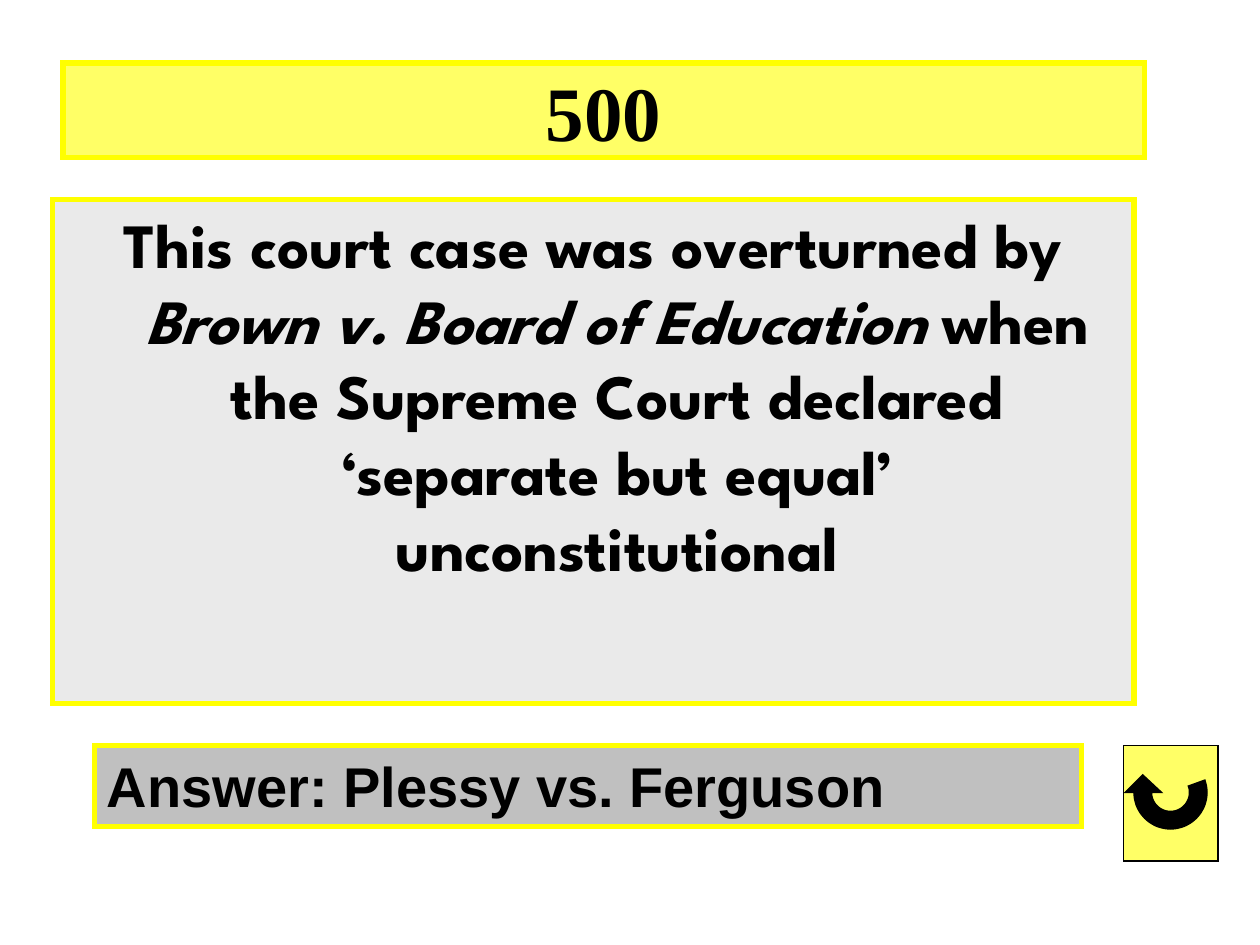
from math import cos, sin, radians
from lxml.etree import SubElement
from pptx import Presentation
from pptx.dml.color import RGBColor
from pptx.enum.shapes import MSO_SHAPE as Shape
from pptx.enum.text import PP_ALIGN as Align, MSO_ANCHOR as Anchor
from pptx.oxml.ns import qn
from pptx.util import Inches, Pt

WIDE, HIGH = 10, 7.5
COLS, ROWS = 120, 90  # grid cells of 1/12 inch


def tint(code):
    return RGBColor.from_string(code)


def write(shape, runs, font, size, align=Align.LEFT, anchor=Anchor.TOP,
          hang=0, before=None):
    """Fill one paragraph; runs are (text, italic) pairs."""
    frame = shape.text_frame
    frame.word_wrap = True
    frame.vertical_anchor = anchor
    para = frame.paragraphs[0]
    para.alignment = align
    if before is not None:
        para.space_before = Pt(before)
    if hang:
        props = para._p.get_or_add_pPr()
        props.set("marL", str(Inches(hang)))
        props.set("indent", str(-Inches(hang)))
    for text, slant in runs:
        run = para.add_run()
        run.text = text
        face = run.font
        face.name, face.size = font, Pt(size)
        face.bold, face.italic = True, slant
        face.color.rgb = tint("000000")


class Board:
    edge, glow, ink = "FFFF00", "FFFF66", "000000"

    def __init__(self, deck):
        self.slide = deck.slides.add_slide(deck.slide_layouts[5])

    def place(self, col, row, cols, rows):
        x, y = Inches(WIDE / COLS), Inches(HIGH / ROWS)
        return [round(n) for n in (col * x, row * y, cols * x, rows * y)]

    def paint(self, shape, fill, line, width):
        shape.fill.solid()
        shape.fill.fore_color.rgb = tint(fill)
        shape.line.color.rgb = tint(line)
        shape.line.width = Pt(width)
        # Square corners
        stroke = shape._element.spPr.find(qn("a:ln"))
        SubElement(stroke, qn("a:miter")).set("lim", "800000")

    def title(self, text, *cells):
        head = self.slide.shapes.title
        head.left, head.top, head.width, head.height = self.place(*cells)
        self.paint(head, self.glow, self.edge, 3)
        write(head, [(text, False)], "Times New Roman", 44,
              Align.CENTER, Anchor.MIDDLE)

    def box(self, fill, *cells, line=edge, width=3, home=None):
        shapes = (home or self.slide).shapes
        rect = shapes.add_shape(Shape.RECTANGLE, *self.place(*cells))
        rect.shadow.inherit = False
        self.paint(rect, fill, line, width)
        return rect

    def button(self, *cells):
        group = self.slide.shapes.add_group_shape()
        self.box(self.glow, *cells, line=self.ink, width=0.75, home=group)

        # Return arrow in 1/1000 inch: ring sector with a head pointing up
        x, y, outer, inner = 9290, 6290, 290, 150
        turn = range(180, -21, -5)

        def arc(radius, angles):
            return [(x + radius * cos(radians(a)), y + radius * sin(radians(a)))
                    for a in angles]

        head = [(8930, y), (9070, 6150), (9220, y)]
        pts = arc(inner, turn) + arc(outer, reversed(turn)) + head
        pen = group.shapes.build_freeform(*pts[0], scale=Inches(1) / 1000)
        pen.add_line_segments(pts[1:], close=True)
        arrow = pen.convert_to_shape()
        arrow.shadow.inherit = False
        self.paint(arrow, self.ink, self.ink, 0.75)


def main():
    deck = Presentation()
    deck.slide_width, deck.slide_height = Inches(WIDE), Inches(HIGH)
    board = Board(deck)

    # Points
    board.title("500", 6, 6, 103, 9)

    # Clue
    clue = board.box("EAEAEA", 5, 19, 103, 48)
    write(clue, [
        ("This court case was overturned by ", False),
        ("Brown v. Board of Education ", True),
        ("when the Supreme Court declared ‘separate but equal’ "
         "unconstitutional", False),
    ], "League Spartan", 36, Align.CENTER, hang=0.38, before=7.2)

    # Answer
    reply = board.box("C0C0C0", 9, 71, 94, 7.7)
    write(reply, [("Answer: Plessy vs. Ferguson", False)], "Arial", 32)

    # Return button
    board.button(107, 71, 9, 11)

    deck.save("out.pptx")


if __name__ == "__main__":
    main()
